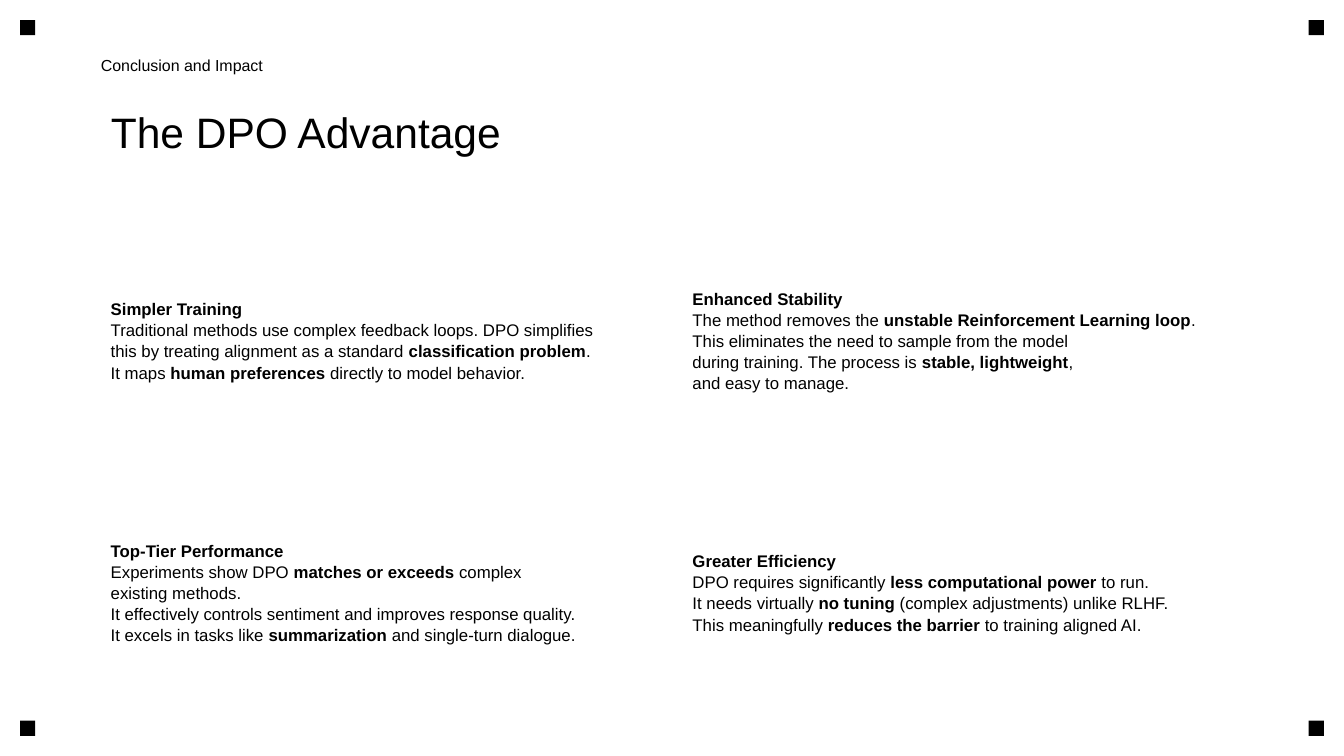
"""Build the closing slide on the advantages of DPO."""
from dataclasses import dataclass
from itertools import product

from pptx import Presentation, util as u
from pptx.dml.color import RGBColor
from pptx.enum import shapes, text
from pptx.slide import Slide
from pptx.text.text import TextFrame


@dataclass(frozen=True)
class Theme:
    font: str = "Arial"
    ink: RGBColor = RGBColor(0, 0, 0)
    paper: RGBColor = RGBColor(255, 255, 255)
    title_size: float = 30.4
    body_size: float = 12
    eyebrow_size: float = 11.4


@dataclass(frozen=True)
class Grid:
    width: float = 13.33
    height: float = 7.5
    margin: float = 1
    top: float = 2.3
    column: float = 5.56
    row: float = 2.2
    column_gap: float = 0.21
    row_gap: float = 0.3

    def cell(self, row: int, col: int) -> tuple[float, float, float, float]:
        return (self.margin + col * (self.column + self.column_gap),
                self.top + row * (self.row + self.row_gap), self.column, self.row)


@dataclass(frozen=True)
class Advantage:
    heading: str
    lines: tuple[str, ...]


THEME = Theme()
GRID = Grid()
INSETS = (0.1, 0.05, 0.05, 0.1)
LINE_SPACING = 1.05
MARK_SIZE, MARK_INSET = 0.15, 0.2

ADVANTAGES = (
    Advantage("Simpler Training", (
        "Traditional methods use complex feedback loops. DPO simplifies",
        "this by treating alignment as a standard *classification problem*.",
        "It maps *human preferences* directly to model behavior.")),
    Advantage("Enhanced Stability", (
        "The method removes the *unstable Reinforcement Learning loop*.",
        "This eliminates the need to sample from the model",
        "during training. The process is *stable, lightweight*,",
        "and easy to manage.")),
    Advantage("Top-Tier Performance", (
        "Experiments show DPO *matches or exceeds* complex",
        "existing methods.",
        "It effectively controls sentiment and improves response quality.",
        "It excels in tasks like *summarization* and single-turn dialogue.")),
    Advantage("Greater Efficiency", (
        "DPO requires significantly *less computational power* to run.",
        "It needs virtually *no tuning* (complex adjustments) unlike RLHF.",
        "This meaningfully *reduces the barrier* to training aligned AI.")),
)


def inches(*lengths: float) -> list[u.Length]:
    return [u.Inches(length) for length in lengths]


def write(frame: TextFrame, lines: tuple[str, ...], size: float,
          insets: tuple[float, ...] = INSETS,
          anchor: text.MSO_ANCHOR = text.MSO_ANCHOR.MIDDLE,
          spacing: float = 1.0) -> None:
    frame.word_wrap = True
    frame.auto_size = text.MSO_AUTO_SIZE.NONE
    frame.vertical_anchor = anchor
    (frame.margin_left, frame.margin_top,
     frame.margin_right, frame.margin_bottom) = inches(*insets)
    for index, line in enumerate(lines):
        paragraph = frame.add_paragraph() if index else frame.paragraphs[0]
        paragraph.alignment = text.PP_ALIGN.LEFT
        paragraph.line_spacing = spacing
        paragraph.font.name = THEME.font
        paragraph.font.size = u.Pt(size)
        paragraph.font.color.rgb = THEME.ink
        for part, words in enumerate(line.split("*")):
            if words:
                run = paragraph.add_run()
                run.text = words
                if part % 2:
                    run.font.bold = True


def add_corner_marks(slide: Slide) -> None:
    far_x, far_y = (side - MARK_INSET - MARK_SIZE for side in (GRID.width, GRID.height))
    for top, left in product((MARK_INSET, far_y), (MARK_INSET, far_x)):
        mark = slide.shapes.add_shape(shapes.MSO_SHAPE.RECTANGLE,
                                      *inches(left, top, MARK_SIZE, MARK_SIZE))
        mark.shadow.inherit = False
        mark.fill.solid()
        mark.fill.fore_color.rgb = THEME.ink
        mark.line.fill.background()


def add_title(slide: Slide, words: str) -> None:
    title = slide.shapes.title
    title.left, title.top, title.width, title.height = inches(
        GRID.margin, 1, GRID.width - 2 * GRID.margin, 1)
    write(title.text_frame, (words,), THEME.title_size, anchor=text.MSO_ANCHOR.TOP)


def add_eyebrow(slide: Slide, words: str) -> None:
    box = slide.shapes.add_textbox(*inches(GRID.margin, 0.4, 6, 0.5))
    write(box.text_frame, (words,), THEME.eyebrow_size, insets=(0, 0, 0, 0))


def add_advantage(slide: Slide, advantage: Advantage, row: int, col: int) -> None:
    box = slide.shapes.add_textbox(*inches(*GRID.cell(row, col)))
    write(box.text_frame, (f"*{advantage.heading}*", *advantage.lines),
          THEME.body_size, spacing=LINE_SPACING)


def main() -> None:
    deck = Presentation()
    deck.slide_width, deck.slide_height = inches(GRID.width, GRID.height)
    slide = deck.slides.add_slide(deck.slide_layouts.get_by_name("Title Only"))
    slide.background.fill.solid()
    slide.background.fill.fore_color.rgb = THEME.paper
    add_corner_marks(slide)
    add_title(slide, "The DPO Advantage")
    for index, advantage in enumerate(ADVANTAGES):
        add_advantage(slide, advantage, *divmod(index, 2))
    add_eyebrow(slide, "Conclusion and Impact")
    deck.save("out.pptx")


if __name__ == "__main__":
    main()
